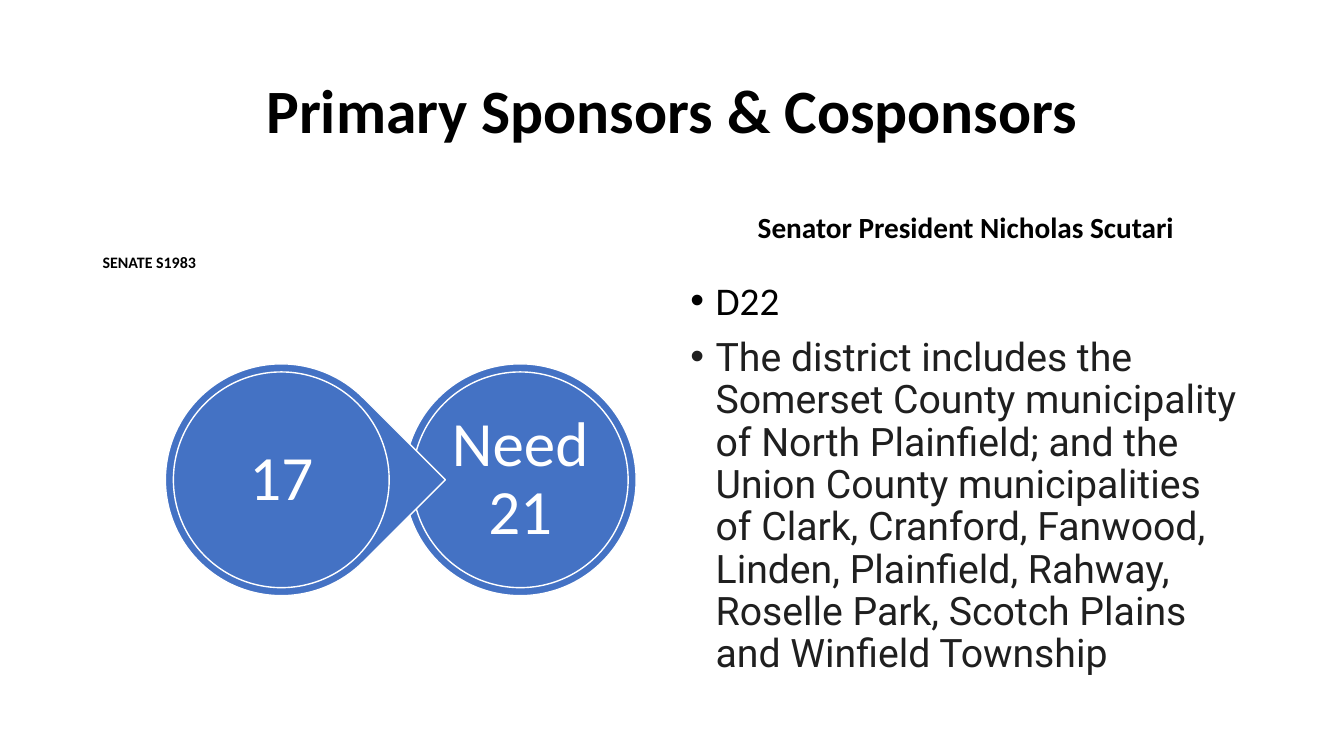
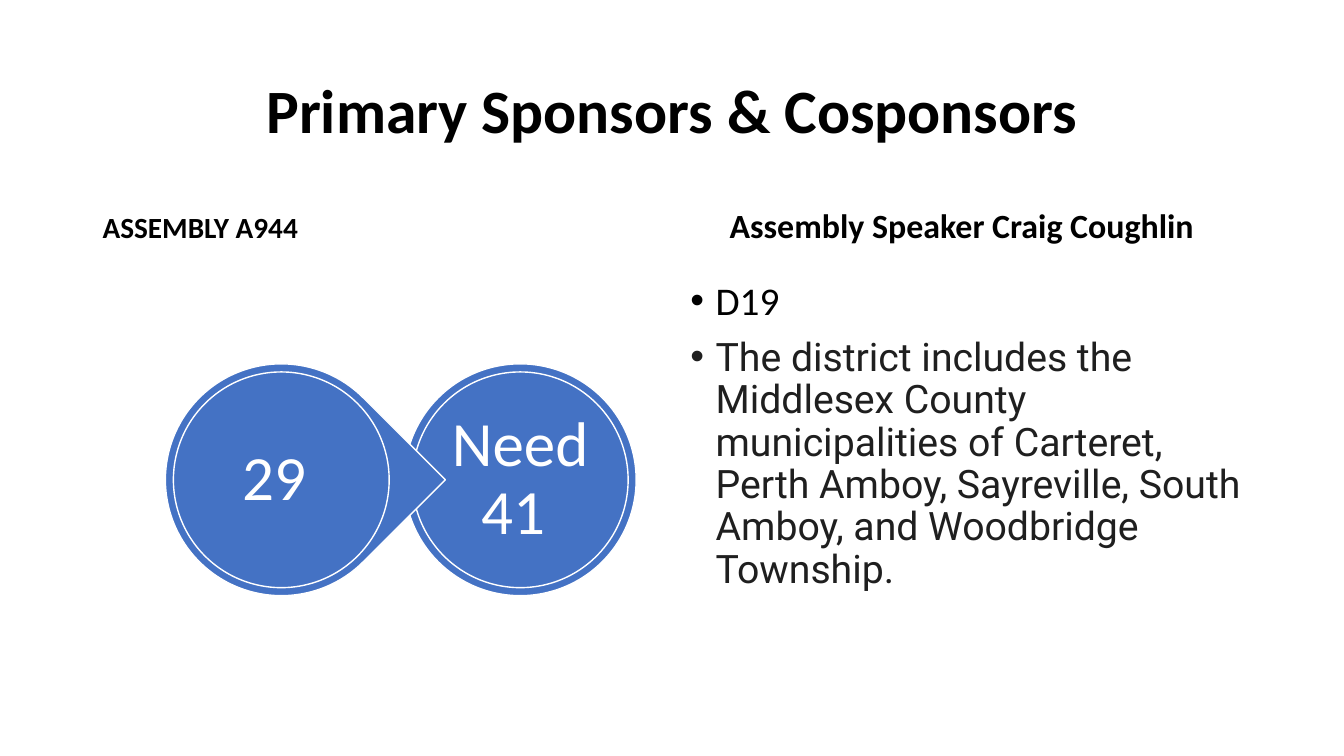
from dataclasses import dataclass

from lxml import etree
from pptx import Presentation
from pptx.dml.color import RGBColor
from pptx.enum import shapes, text
from pptx.oxml.ns import qn
from pptx.util import Inches, Pt


@dataclass(frozen=True)
class Theme:
    black: RGBColor = RGBColor(0x00, 0x00, 0x00)
    charcoal: RGBColor = RGBColor(0x1F, 0x1F, 0x1F)
    blue: RGBColor = RGBColor(0x44, 0x72, 0xC4)
    white: RGBColor = RGBColor(0xFF, 0xFF, 0xFF)
    font: str = "Calibri"
    district_font: str = "Roboto"
    title_size: float = 44
    count_size: float = 45
    body_size: float = 28
    heading_size: float = 20.9
    large_heading_size: float = 24.2
    small_heading_size: float = 11.4


THEME = Theme()
TITLE = "Primary Sponsors & Cosponsors"
LEFT, RIGHT = 0.92, 6.75
COLUMN_WIDTH = 5.66
HEADING_TOP, HEADING_HEIGHT = 1.84, 0.9
BODY_TOP, BODY_HEIGHT = 2.74, 4.03
HEADING_LIFT = 0.32
CENTER_Y = 4.76
VOTES_X, NEEDED_X = 2.79, 5.16
OUTER, INNER, LABEL = 2.3, 2.14, 1.53

SLIDES = [
    {
        "bill": "SENATE S1983",
        "bill_size": THEME.small_heading_size,
        "bill_lift": 0.05,
        "votes": "17",
        "needed": "Need 21",
        "leader": "Senator President Nicholas Scutari",
        "leader_size": THEME.heading_size,
        "district": "D22",
        "towns": "The district includes the Somerset County municipality of "
                 "North Plainfield; and the Union County municipalities of "
                 "Clark, Cranford, Fanwood, Linden, Plainfield, Rahway, "
                 "Roselle Park, Scotch Plains and Winfield Township",
    },
    {
        "bill": "ASSEMBLY A944",
        "bill_size": THEME.heading_size,
        "bill_lift": HEADING_LIFT,
        "votes": "29 ",
        "needed": "Need 41 ",
        "leader": "Assembly Speaker Craig Coughlin ",
        "leader_size": THEME.large_heading_size,
        "district": "D19",
        "towns": "The district includes the Middlesex County municipalities "
                 "of Carteret, Perth Amboy, Sayreville, South Amboy, and "
                 "Woodbridge Township.",
    },
]


def format_paragraph(para, size, color=THEME.black, font=THEME.font,
                     bold=False, align=text.PP_ALIGN.LEFT, spacing=0.9):
    para.alignment = align
    para.line_spacing = spacing
    for span in para.runs:
        span.font.size = Pt(size)
        span.font.name = font
        span.font.bold = bold
        span.font.color.rgb = color


def add_title(page):
    title = page.shapes.title
    title.left, title.top = Inches(LEFT), Inches(0.4)
    title.width, title.height = Inches(11.5), Inches(1.45)
    frame = title.text_frame
    frame.text = TITLE
    frame.word_wrap = True
    frame.auto_size = text.MSO_AUTO_SIZE.NONE
    frame.vertical_anchor = text.MSO_ANCHOR.MIDDLE
    format_paragraph(frame.paragraphs[0], THEME.title_size, bold=True,
                     align=text.PP_ALIGN.CENTER)


def add_text_box(page, left, top, width, height, words, anchor):
    box = page.shapes.add_textbox(Inches(left), Inches(top),
                                  Inches(width), Inches(height))
    frame = box.text_frame
    frame.text = words
    frame.word_wrap = True
    frame.vertical_anchor = anchor
    return frame


def add_heading(page, left, words, size, lift, align=text.PP_ALIGN.LEFT):
    """Set a column heading whose text sits `lift` inches above the box bottom."""
    frame = add_text_box(page, left, HEADING_TOP, COLUMN_WIDTH, HEADING_HEIGHT,
                         words, text.MSO_ANCHOR.BOTTOM)
    frame.margin_bottom = Inches(lift)
    format_paragraph(frame.paragraphs[0], size, bold=True, align=align,
                     spacing=0.7)


def add_bullet(para):
    props = para._p.get_or_add_pPr()
    props.set("marL", str(Inches(0.25)))
    props.set("indent", str(-Inches(0.25)))
    etree.SubElement(props, qn("a:buFont")).set("typeface", "Arial")
    etree.SubElement(props, qn("a:buChar")).set("char", "•")


def add_district(page, district, towns):
    frame = add_text_box(page, RIGHT, BODY_TOP, COLUMN_WIDTH, BODY_HEIGHT,
                         f"{district}\n{towns}", text.MSO_ANCHOR.TOP)
    for para in frame.paragraphs:
        add_bullet(para)
    number, places = frame.paragraphs
    format_paragraph(number, THEME.body_size)
    format_paragraph(places, THEME.body_size, THEME.charcoal,
                     THEME.district_font)
    places.space_before = Pt(10)


def add_disc(page, kind, center_x, diameter):
    disc = page.shapes.add_shape(
        kind, Inches(center_x - diameter / 2), Inches(CENTER_Y - diameter / 2),
        Inches(diameter), Inches(diameter))
    disc.shadow.inherit = False
    disc.fill.solid()
    disc.fill.fore_color.rgb = THEME.blue
    disc.line.color.rgb = THEME.white
    disc.line.width = Pt(1)
    return disc


def add_count(page, center_x, words, kind, rotation=0):
    """Draw an outer shape, its inner ring and the count in the middle."""
    add_disc(page, kind, center_x, OUTER).rotation = rotation
    add_disc(page, shapes.MSO_SHAPE.OVAL, center_x, INNER)
    frame = add_text_box(page, center_x - LABEL / 2, CENTER_Y - LABEL / 2,
                         LABEL, LABEL, words, text.MSO_ANCHOR.MIDDLE)
    frame.margin_left = frame.margin_right = Inches(0.06)
    frame.margin_top = frame.margin_bottom = Inches(0.06)
    format_paragraph(frame.paragraphs[0], THEME.count_size, THEME.white,
                     align=text.PP_ALIGN.CENTER)


def add_sponsor_slide(deck, content):
    page = deck.slides.add_slide(deck.slide_layouts.get_by_name("Title Only"))
    add_title(page)
    add_heading(page, LEFT, content["bill"], content["bill_size"],
                content["bill_lift"])
    add_count(page, NEEDED_X, content["needed"], shapes.MSO_SHAPE.OVAL)
    add_count(page, VOTES_X, content["votes"], shapes.MSO_SHAPE.TEAR, 45)
    add_heading(page, RIGHT, content["leader"], content["leader_size"],
                HEADING_LIFT, text.PP_ALIGN.CENTER)
    add_district(page, content["district"], content["towns"])


def main():
    deck = Presentation()
    deck.slide_width, deck.slide_height = Inches(13.33), Inches(7.5)
    for content in SLIDES:
        add_sponsor_slide(deck, content)
    deck.save("out.pptx")


if __name__ == "__main__":
    main()
